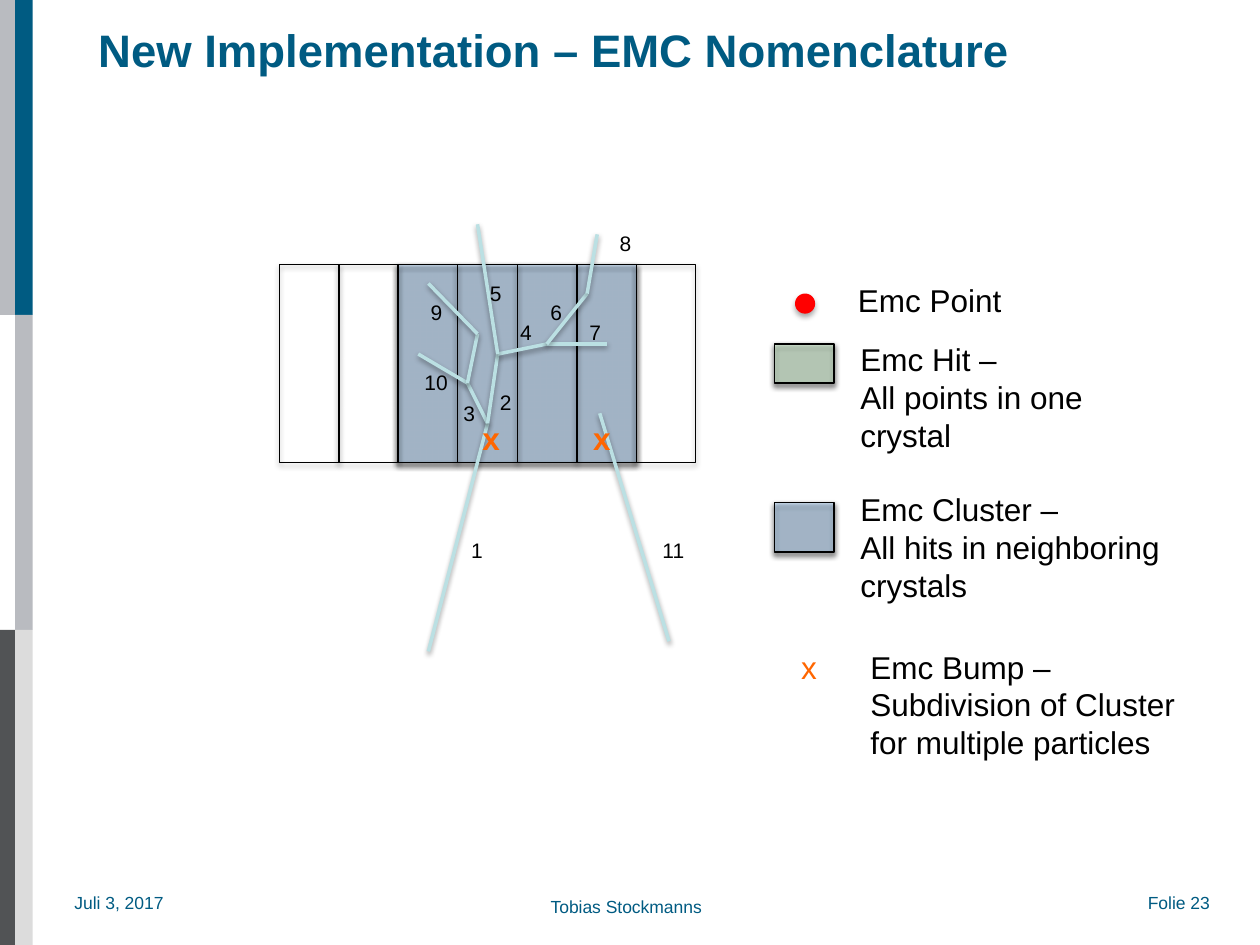
from dataclasses import dataclass

import lxml.etree
import pptx
import pptx.dml.color
import pptx.enum.shapes
import pptx.enum.text
import pptx.oxml.ns
import pptx.util

PX = 9144  # EMU per px, 100 px to the inch
SHAPES = pptx.enum.shapes.MSO_SHAPE
ANCHOR = pptx.enum.text.MSO_ANCHOR
AUTO_SIZE = pptx.enum.text.MSO_AUTO_SIZE


@dataclass(frozen=True)
class Theme:
    font: str = "Arial"
    title_size: int = 26
    legend_size: int = 18
    label_size: int = 12
    footer_size: int = 10
    blue: str = "005B82"
    grey: str = "B9BBC0"
    dark_grey: str = "515355"
    light_grey: str = "DCDCDC"
    black: str = "000000"
    track: str = "BBE0E3"
    point: str = "FF0000"
    hit: str = "CCFFCC"
    cluster: str = "99CCFF"
    bump: str = "FF6600"


THEME = Theme()

BARS = [  # left, top, colour
    (0, 0, THEME.grey),
    (0, 500, THEME.dark_grey),
    (12, 0, THEME.blue),
    (12, 250, THEME.grey),
    (12, 500, THEME.light_grey),
]
FOOTERS = [
    ("Juli 3, 2017", 59, 708, 85),
    ("Folie 23", 911, 708, 62),
    ("Tobias Stockmanns", 437, 711, 126),
]

CRYSTALS = 7
CRYSTALS_LEFT, CRYSTALS_TOP = 222, 210
CRYSTALS_WIDTH, CRYSTAL_HEIGHT = 330, 157
CLUSTER_FIRST, CLUSTER_END = 2, 6  # crystals covered by the cluster

TRACKS = [  # chains of points, one line per step
    [(340, 517), (387, 336), (371, 304), (332, 281)],
    [(387, 336), (395, 281), (434, 273), (482, 273)],
    [(395, 281), (379, 178)],
    [(434, 273), (466, 233), (474, 186)],
    [(371, 304), (379, 265), (340, 225)],
    [(531, 509), (476, 328)],
]
TRACK_LABELS = [  # left and top of the labels 1, 2, 3 ...
    (364, 422), (387, 304), (358, 313), (403, 249), (379, 218), (427, 233),
    (458, 249), (482, 178), (332, 233), (327, 288), (516, 422),
]
LEGEND = [
    ("Emc Point", 671, 218, 135, 40),
    ("Emc Hit –\nAll points in one\ncrystal", 673, 265, 200, 101),
    ("Emc Cluster –\nAll hits in neighboring\ncrystals", 673, 384, 262, 101),
    ("Emc Bump –\nSubdivision of Cluster\vfor multiple particles", 681, 509, 264, 101),
]


def px(n):
    return pptx.util.Emu(n * PX)


def rgb(colour):
    return pptx.dml.color.RGBColor.from_string(colour)


def add_alpha(colour_element, percent):
    lxml.etree.SubElement(
        colour_element, pptx.oxml.ns.qn("a:alpha"), val=str(percent * 1000))


def set_effects(sp, distance, opacity):
    """Give a shape or line a shadow that falls downwards."""
    qn = pptx.oxml.ns.qn
    sp_pr = sp._element.spPr
    effects = sp_pr.find(qn("a:effectLst"))
    if effects is None:
        effects = lxml.etree.SubElement(sp_pr, qn("a:effectLst"))
    shadow = lxml.etree.SubElement(
        effects, qn("a:outerShdw"), blurRad="40000", dist=str(distance),
        dir="5400000", rotWithShape="0")
    colour = lxml.etree.SubElement(shadow, qn("a:srgbClr"), val=THEME.black)
    add_alpha(colour, opacity)


def add_block(slide, left, top, width, height, fill=None, opacity=100,
              outlined=True, shadowed=True, kind=SHAPES.RECTANGLE):
    sp = slide.shapes.add_shape(kind, px(left), px(top), px(width), px(height))
    sp.shadow.inherit = False
    if fill:
        sp.fill.solid()
        sp.fill.fore_color.rgb = rgb(fill)
        if opacity < 100:
            add_alpha(sp._element.spPr.find(".//" + pptx.oxml.ns.qn("a:srgbClr")), opacity)
    else:
        sp.fill.background()
    if outlined:
        sp.line.color.rgb = rgb(THEME.black)
        sp.line.width = pptx.util.Pt(0.75)
    else:
        sp.line.fill.background()
    if shadowed:
        set_effects(sp, 23000, 35)


def add_track(slide, start, end):
    line = slide.shapes.add_connector(
        pptx.enum.shapes.MSO_CONNECTOR.STRAIGHT, *map(px, start + end))
    line.line.color.rgb = rgb(THEME.track)
    line.line.width = pptx.util.Pt(2)
    set_effects(line, 20000, 38)


def add_text(slide, text, left, top, width, height, size,
             colour=THEME.black, bold=False, padded=True):
    sp = slide.shapes.add_textbox(px(left), px(top), px(width), px(height))
    tf = sp.text_frame
    tf.word_wrap = False
    tf.auto_size = AUTO_SIZE.SHAPE_TO_FIT_TEXT
    if not padded:
        tf.margin_left = tf.margin_top = tf.margin_right = tf.margin_bottom = 0
    tf.text = text
    for p in tf.paragraphs:
        for r in p.runs:
            r.font.name = THEME.font
            r.font.size = pptx.util.Pt(size)
            r.font.bold = bold
            r.font.color.rgb = rgb(colour)
    return tf


def add_frame(slide):
    """Side bars, footers and title."""
    for left, top, colour in BARS:
        add_block(slide, left, top, 14, 250, colour, outlined=False, shadowed=False)
    for text, left, top, width in FOOTERS:
        add_text(slide, text, left, top, width, 17, THEME.footer_size,
                 THEME.blue, padded=False)
    tf = add_text(slide, "New Implementation – EMC Nomenclature", 78, 8, 727, 62,
                  THEME.title_size, THEME.blue, bold=True, padded=False)
    tf.word_wrap = True
    tf.auto_size = AUTO_SIZE.NONE
    tf.vertical_anchor = ANCHOR.MIDDLE


def add_crystals(slide):
    edges = [CRYSTALS_LEFT + round(i * CRYSTALS_WIDTH / CRYSTALS)
             for i in range(CRYSTALS + 1)]
    left, right = edges[CLUSTER_FIRST], edges[CLUSTER_END]
    add_block(slide, left, CRYSTALS_TOP, right - left, CRYSTAL_HEIGHT,
              THEME.cluster, opacity=35)
    for left, right in zip(edges, edges[1:]):
        add_block(slide, left, CRYSTALS_TOP, right - left, CRYSTAL_HEIGHT)


def add_tracks(slide):
    for chain in TRACKS:
        for start, end in zip(chain, chain[1:]):
            add_track(slide, start, end)
    for number, (left, top) in enumerate(TRACK_LABELS, 1):
        width = 30 if number < 10 else 40
        add_text(slide, str(number), left, top, width, 30, THEME.label_size)
    for left in (373, 461):
        add_text(slide, "x", left, 328, 36, 40, THEME.legend_size, THEME.bump, bold=True)


def add_legend(slide):
    add_block(slide, 631, 233, 16, 16, THEME.point, outlined=False, kind=SHAPES.OVAL)
    add_block(slide, 615, 273, 47, 31, THEME.hit, opacity=35)
    add_block(slide, 615, 399, 47, 39, THEME.cluster, opacity=35)
    add_text(slide, "x", 626, 509, 33, 40, THEME.legend_size, THEME.bump)
    for text, left, top, width, height in LEGEND:
        add_text(slide, text, left, top, width, height, THEME.legend_size)


def main():
    prs = pptx.Presentation()
    prs.slide_width, prs.slide_height = px(1000), px(750)
    slide = prs.slides.add_slide(prs.slide_layouts[6])
    add_frame(slide)
    add_crystals(slide)
    add_tracks(slide)
    add_legend(slide)
    prs.save("out.pptx")


if __name__ == "__main__":
    main()
